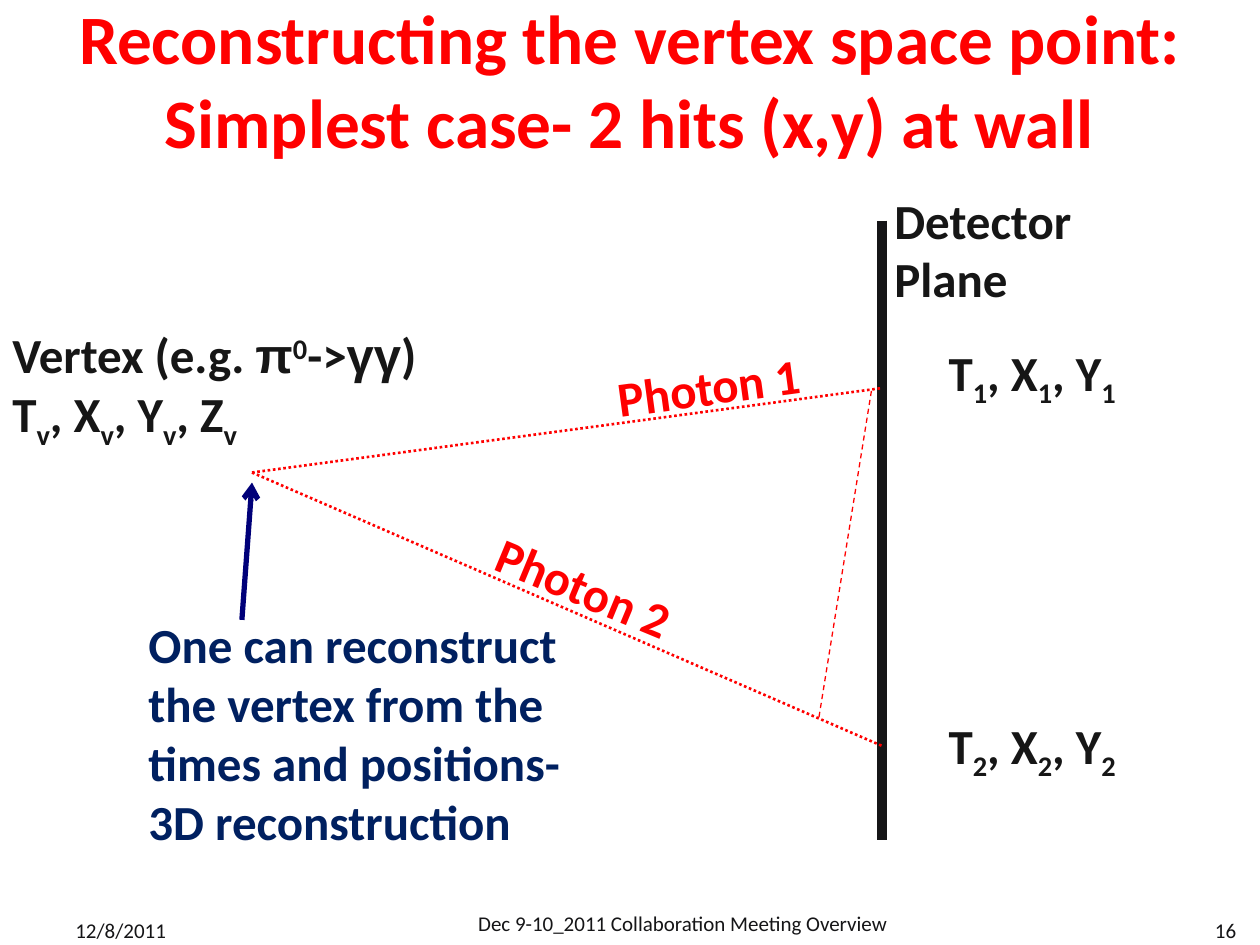
from lxml.etree import SubElement
from pptx import Presentation
from pptx.dml.color import RGBColor
from pptx.enum.dml import MSO_LINE_DASH_STYLE as Dash
from pptx.enum.shapes import MSO_CONNECTOR as Connector
from pptx.enum.text import MSO_ANCHOR as Anchor, PP_ALIGN as Align
from pptx.oxml.ns import qn
from pptx.util import Inches, Pt

RED, INK, BLACK, NAVY, ARROW_BLUE = "FF0000", "161616", "151517", "002060", "000079"
SUB, SUPER = -25000, 30000
VERTEX = (2, 3.75)
WALL_X = 7


def rgb(value):
    return RGBColor.from_string(value)


def add_text(page, place, paragraphs, color=INK, size=28, bold=True,
             align=Align.LEFT, anchor=Anchor.TOP, rotation=0, wrap=True):
    """Each paragraph is a list of (text, baseline, font name) spans."""
    box = page.shapes.add_textbox(*map(Inches, place))
    box.rotation = rotation
    frame = box.text_frame
    frame.word_wrap = wrap
    frame.vertical_anchor = anchor
    for index, spans in enumerate(paragraphs):
        para = frame.add_paragraph() if index else frame.paragraphs[0]
        para.alignment = align
        para.font.size = Pt(size)
        para.font.bold = bold
        para.font.color.rgb = rgb(color)
        for text, baseline, font_name in spans:
            span = para.add_run()
            span.text = text
            span.font.size = Pt(size)
            span.font.bold = bold
            span.font.name = font_name
            span.font.color.rgb = rgb(color)
            if baseline:
                span.font._element.set("baseline", str(baseline))


def plain(text, baseline=0):
    return (text, baseline, "Calibri")


def greek(text):
    return (text, 0, "Arial")


def coordinates(names, index):
    """Spans such as T, X, Y, each with the same subscript."""
    spans = []
    for position, name in enumerate(names):
        spans += [plain(f", {name}" if position else name), plain(index, SUB)]
    return spans


def add_line(page, start, end, color, width, dash=None, arrow=False):
    line = page.shapes.add_connector(Connector.STRAIGHT, *map(Inches, start + end))
    line.line.color.rgb = rgb(color)
    line.line.width = Pt(width)
    if dash:
        line.line.dash_style = dash
    if arrow:
        SubElement(line.line._get_or_add_ln(), qn("a:tailEnd"), type="arrow")
    SubElement(line._element.spPr, qn("a:effectLst"))


def add_footer(page, place, text, align):
    add_text(page, place, [[plain(text)]], BLACK, 12, False, align, Anchor.MIDDLE)


def main():
    deck = Presentation()
    deck.slide_width, deck.slide_height = Inches(10), Inches(7.5)
    page = deck.slides.add_slide(deck.slide_layouts[6])

    title = "Reconstructing the vertex space point: Simplest case- 2 hits (x,y) at wall"
    add_text(page, (0.25, 0, 9.5, 1.25), [[plain(title)]], RED, 39.6,
             align=Align.CENTER, anchor=Anchor.MIDDLE)
    add_footer(page, (0.5, 7.18, 2.33, 0.4), "12/8/2011", Align.LEFT)
    add_footer(page, (3.67, 7.08, 3.5, 0.5),
               "Dec 9-10_2011 Collaboration Meeting Overview", Align.CENTER)
    add_footer(page, (7.58, 7.18, 2.33, 0.4), "16", Align.RIGHT)

    add_line(page, (WALL_X, 1.75), (WALL_X, 6.67), BLACK, 6)
    for hit_y in (3.08, 5.92):
        add_line(page, VERTEX, (WALL_X, hit_y), RED, 1.5, Dash.ROUND_DOT)
    for index, top in (("1", 2.67), ("2", 5.63)):
        add_text(page, (7.43, top, 2.42, 0.57), [coordinates("TXY", index)])

    decay = [plain("Vertex (e.g. "), greek("π"), plain("0", SUPER), plain("->"),
             greek("γγ"), plain(")")]
    add_text(page, (0, 2.53, 3.83, 1.04), [decay, coordinates("TXYZ", "v")])

    add_text(page, (4.8, 2.78, 1.67, 0.57), [[plain("Photon 1")]], RED,
             rotation=352.3, wrap=False)
    add_text(page, (3.72, 4.36, 1.67, 1.04), [[plain("Photon 2")]], RED,
             rotation=22.5, wrap=False)
    add_line(page, (6.5, 5.69), (6.92, 3.08), RED, 0.75, Dash.DASH)
    add_text(page, (WALL_X, 1.46, 2.42, 1.04), [[plain("Detector Plane")]])

    note = "One can reconstruct the vertex from the times and positions- 3D reconstruction"
    add_text(page, (1.08, 4.83, 3.69, 1.99), [[plain(note)]], NAVY)
    add_line(page, (1.92, 4.92), (2, 3.83), ARROW_BLUE, 3, arrow=True)

    deck.save("out.pptx")


if __name__ == "__main__":
    main()
